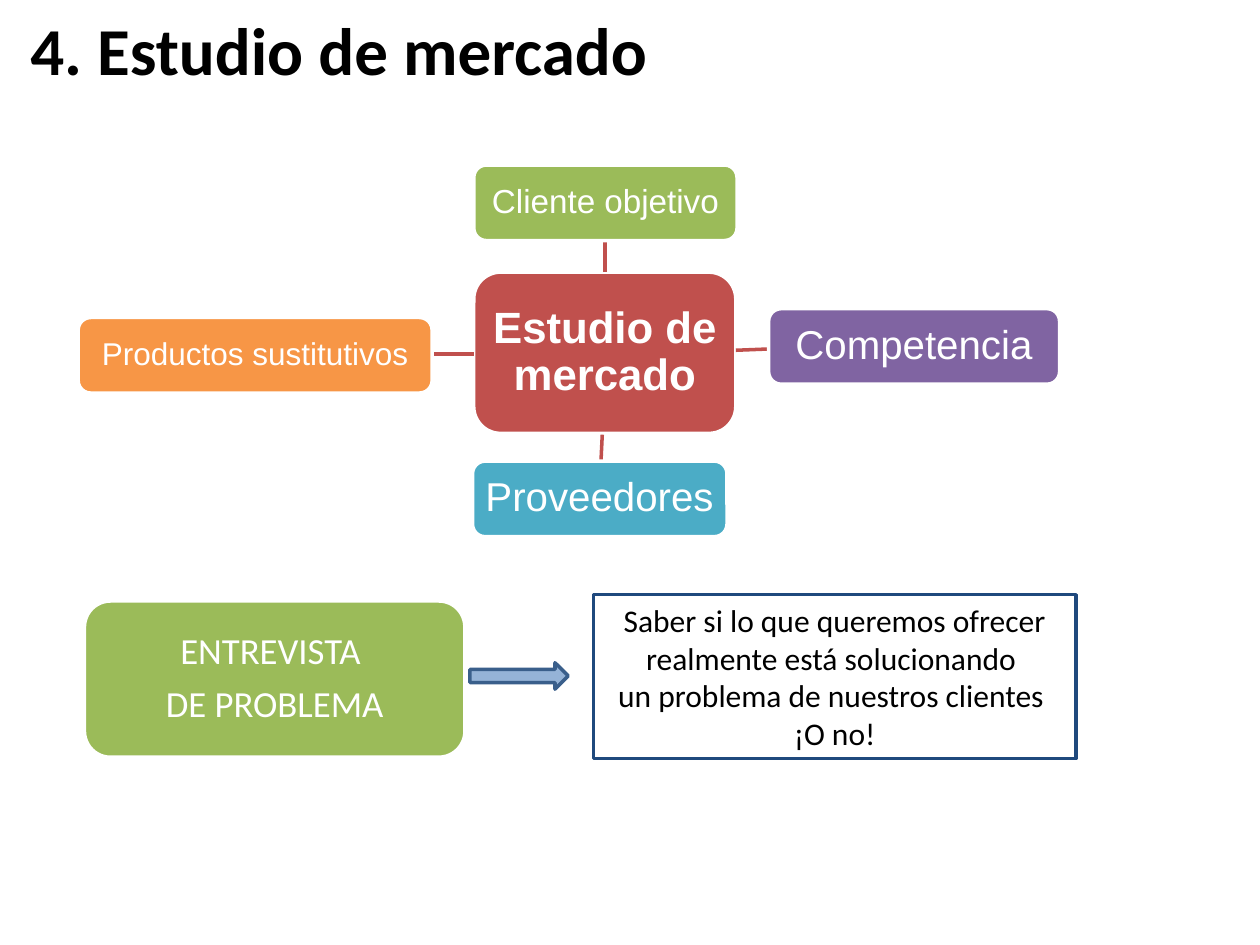
from dataclasses import dataclass

from lxml import etree
from pptx import Presentation
from pptx import util as u
from pptx.dml.color import RGBColor
from pptx.enum import shapes, text
from pptx.oxml.ns import qn


@dataclass(frozen=True)
class Theme:
    black: str = "000000"
    white: str = "FFFFFF"
    red: str = "C0504D"
    green: str = "9BBB59"
    purple: str = "8064A2"
    teal: str = "4BACC6"
    orange: str = "F79646"
    navy: str = "1F497D"
    arrow_fill: str = "95B3D7"
    arrow_line: str = "3A5F8B"
    title_size: float = 38.3
    hub_size: float = 25
    interview_size: float = 21
    note_size: float = 18
    line_width: float = 2
    heading_font: str = "Arial"
    body_font: str = "Calibri"


T = Theme()
Box = tuple[float, float, float, float]


@dataclass(frozen=True)
class Label:
    lines: tuple[str, ...]
    size: float
    font: str = T.heading_font
    color: str = T.white
    bold: bool = False
    align: text.PP_ALIGN = text.PP_ALIGN.CENTER
    spacing: float = 0.9
    after: float = 0


@dataclass(frozen=True)
class Node:
    box: Box
    fill: str
    label: Label
    inset: float = 0.06


@dataclass(frozen=True)
class Spoke:
    start: tuple[float, float]
    end: tuple[float, float]
    node: Node


HUB = Node((3.76, 2.16, 2.08, 1.28), T.red,
           Label(("Estudio de mercado",), T.hub_size, bold=True), 0.07)
SPOKES = (
    Spoke((4.8, 2.16), (4.8, 1.91),
          Node((3.76, 1.31, 2.09, 0.6), T.green, Label(("Cliente objetivo",), 19), 0.05)),
    Spoke((5.84, 2.78), (6.1, 2.77),
          Node((6.1, 2.45, 2.31, 0.6), T.purple, Label(("Competencia",), 23))),
    Spoke((4.78, 3.45), (4.77, 3.66),
          Node((3.75, 3.66, 2.02, 0.6), T.teal, Label(("Proveedores",), 23))),
    Spoke((3.76, 2.81), (3.43, 2.81),
          Node((0.62, 2.52, 2.81, 0.6), T.orange, Label(("Productos sustitutivos",), 18), 0.05)),
)
INTERVIEW = Node((0.67, 4.77, 3.02, 1.24), T.green,
                 Label(("ENTREVISTA ", "DE PROBLEMA"), T.interview_size, T.body_font, after=7.3))
NOTE = Label(("Saber si lo que queremos ofrecer realmente está solucionando ",
              "un problema de nuestros clientes ", "¡O no!"),
             T.note_size, T.body_font, T.black, spacing=1)
TITLE = Label(("4. Estudio de mercado",), T.title_size, T.body_font, T.black,
              bold=True, align=text.PP_ALIGN.LEFT, spacing=0.8)


def rgb(color: str) -> RGBColor:
    return RGBColor.from_string(color)


def write(tf, label: Label, inset_x: float, inset_y: float, anchor=text.MSO_ANCHOR.MIDDLE) -> None:
    tf.word_wrap = True
    tf.auto_size = text.MSO_AUTO_SIZE.NONE
    tf.vertical_anchor = anchor
    tf.margin_left = tf.margin_right = u.Inches(inset_x)
    tf.margin_top = tf.margin_bottom = u.Inches(inset_y)
    for i, line in enumerate(label.lines):
        p = tf.add_paragraph() if i else tf.paragraphs[0]
        p.alignment = label.align
        p.line_spacing = label.spacing
        p.space_before = u.Pt(0)
        p.space_after = u.Pt(label.after)
        r = p.add_run()
        r.text = line
        r.font.name, r.font.size = label.font, u.Pt(label.size)
        r.font.bold = label.bold
        r.font.color.rgb = rgb(label.color)


def add_shape(s, kind, box: Box, fill: str | None, line: str):
    sp = s.shapes.add_shape(kind, *map(u.Inches, box))
    sp.shadow.inherit = False
    if fill:
        sp.fill.solid()
        sp.fill.fore_color.rgb = rgb(fill)
    else:
        sp.fill.background()
    sp.line.color.rgb = rgb(line)
    sp.line.width = u.Pt(T.line_width)
    return sp


def add_node(s, node: Node) -> None:
    sp = add_shape(s, shapes.MSO_SHAPE.ROUNDED_RECTANGLE, node.box, node.fill, T.white)
    write(sp.text_frame, node.label, node.inset, node.inset)


def add_spoke(s, spoke: Spoke) -> None:
    cx = s.shapes.add_connector(shapes.MSO_CONNECTOR.STRAIGHT,
                                *map(u.Inches, spoke.start + spoke.end))
    cx.line.color.rgb = rgb(T.red)
    cx.line.width = u.Pt(T.line_width)
    etree.SubElement(cx._element.spPr, qn("a:effectLst"))
    add_node(s, spoke.node)


def main() -> None:
    prs = Presentation()
    prs.slide_width, prs.slide_height = u.Inches(10), u.Inches(7.5)
    s = prs.slides.add_slide(prs.slide_layouts[5])

    title = s.shapes.title
    title.left, title.top, title.width, title.height = map(u.Inches, (0.14, 0.13, 9, 0.63))
    write(title.text_frame, TITLE, 0.1, 0.05)

    add_node(s, HUB)
    for spoke in SPOKES:
        add_spoke(s, spoke)

    add_node(s, INTERVIEW)
    note = add_shape(s, shapes.MSO_SHAPE.RECTANGLE, (4.71, 4.72, 3.83, 1.3), None, T.navy)
    write(note.text_frame, NOTE, 0.1, 0.05, text.MSO_ANCHOR.TOP)
    add_shape(s, shapes.MSO_SHAPE.RIGHT_ARROW, (3.73, 5.26, 0.78, 0.21), T.arrow_fill, T.arrow_line)

    prs.save("out.pptx")


if __name__ == "__main__":
    main()
